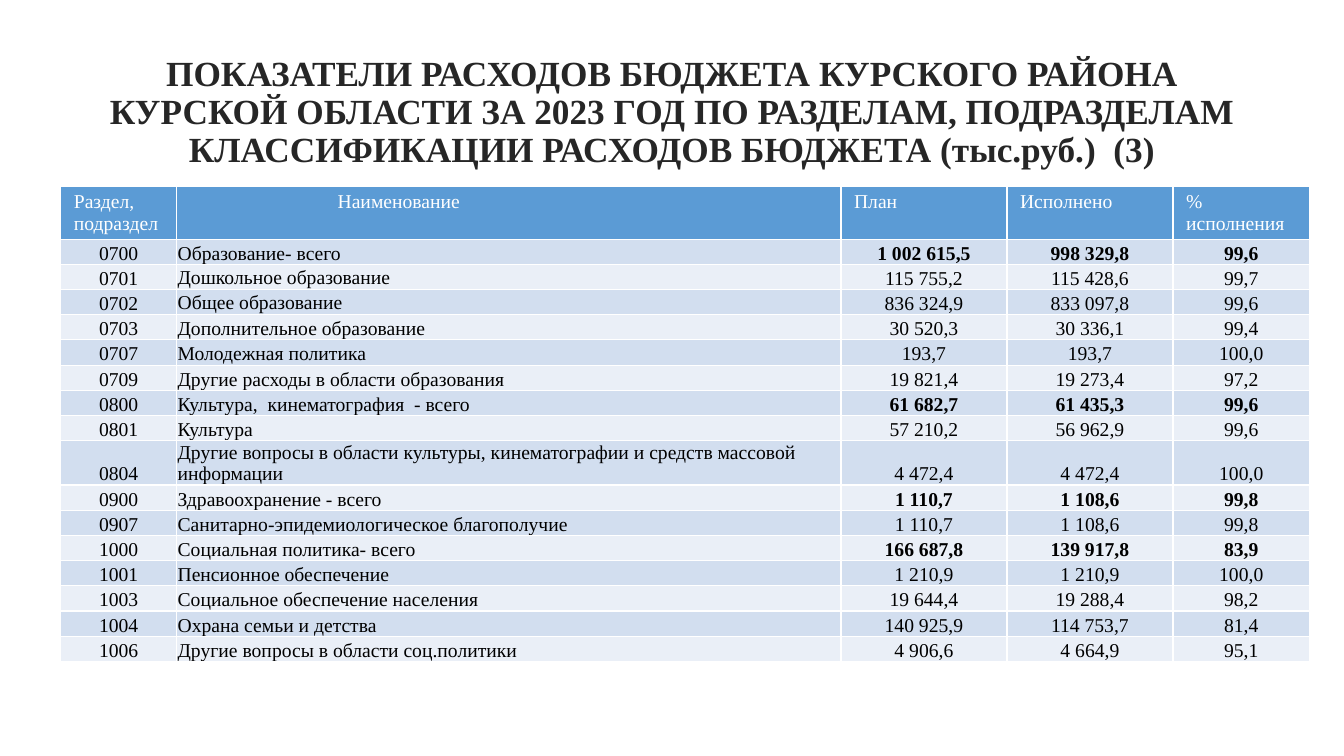
"""Build the slide on budget spending by section and subsection."""
from typing import Any, NamedTuple

from pptx import Presentation
from pptx.dml.color import RGBColor
from pptx.enum import text as t
from pptx.util import Pt

COLORS = {
    "title": "262626",
    "header": "5B9BD5",
    "header_text": "FFFFFF",
    "body_text": "000000",
    "odd": "D2DEEF",
    "even": "EAEFF7",
}
FONT = "Times New Roman"
TITLE = (
    "ПОКАЗАТЕЛИ РАСХОДОВ БЮДЖЕТА КУРСКОГО РАЙОНА КУРСКОЙ ОБЛАСТИ ЗА 2023 ГОД "
    "ПО РАЗДЕЛАМ, ПОДРАЗДЕЛАМ КЛАССИФИКАЦИИ РАСХОДОВ БЮДЖЕТА (тыс.руб.)  (3)"
)


class Column(NamedTuple):
    heading: str
    width: float
    indent: float = 9.4
    align: t.PP_ALIGN = t.PP_ALIGN.CENTER


class Expense(NamedTuple):
    code: str
    label: str
    plan: str
    spent: str
    percent: str
    height: float = 18


COLUMNS = [
    Column("Раздел, подраздел", 82.8),
    Column("Наименование", 474.5, 115, t.PP_ALIGN.LEFT),
    Column("План", 118.6),
    Column("Исполнено", 118.6),
    Column("%\nисполнения", 97.6),
]
EXPENSES = [
    Expense("0700", "Образование- всего", "1 002 615,5", "998 329,8", "99,6"),
    Expense("0701", "Дошкольное образование", "115 755,2", "115 428,6", "99,7"),
    Expense("0702", "Общее образование", "836 324,9", "833 097,8", "99,6"),
    Expense("0703", "Дополнительное образование", "30 520,3", "30 336,1", "99,4"),
    Expense("0707", "Молодежная политика", "193,7", "193,7", "100,0"),
    Expense("0709", "Другие расходы в области образования", "19 821,4", "19 273,4", "97,2"),
    Expense("0800", "Культура,  кинематография  - всего", "61 682,7", "61 435,3", "99,6"),
    Expense("0801", "Культура", "57 210,2", "56 962,9", "99,6"),
    Expense(
        "0804",
        "Другие вопросы в области культуры, кинематографии и средств массовой информации",
        "4 472,4", "4 472,4", "100,0", 31.4,
    ),
    Expense("0900", "Здравоохранение - всего", "1 110,7", "1 108,6", "99,8"),
    Expense("0907", "Санитарно-эпидемиологическое благополучие", "1 110,7", "1 108,6", "99,8"),
    Expense("1000", "Социальная политика- всего", "166 687,8", "139 917,8", "83,9"),
    Expense("1001", "Пенсионное обеспечение", "1 210,9", "1 210,9", "100,0"),
    Expense("1003", "Социальное обеспечение населения", "19 644,4", "19 288,4", "98,2"),
    Expense("1004", "Охрана семьи и детства", "140 925,9", "114 753,7", "81,4"),
    Expense("1006", "Другие вопросы в области соц.политики", "4 906,6", "4 664,9", "95,1"),
]
HEADER_HEIGHT = 37.5
MIDDLE_CODES = ("0701", "0702")


def write(frame: Any, wording: str, *, color: str, size: float = 14, bold: bool = False,
          align: t.PP_ALIGN = t.PP_ALIGN.LEFT, spacing: float = 1.0) -> None:
    """Put formatted wording into a text frame."""
    frame.text = wording
    for paragraph in frame.paragraphs:
        paragraph.alignment = align
        paragraph.line_spacing = spacing
        for run in paragraph.runs:
            run.font.name = FONT
            run.font.size = Pt(size)
            run.font.bold = bold
            run.font.color.rgb = RGBColor.from_string(COLORS[color])


def style_cell(cell: Any, fill: str, anchor: t.MSO_ANCHOR,
               insets: tuple[float, float, float, float]) -> None:
    """Set a cell's fill, anchor and insets (left, top, right, bottom)."""
    cell.fill.solid()
    cell.fill.fore_color.rgb = RGBColor.from_string(COLORS[fill])
    cell.vertical_anchor = anchor
    cell.margin_left, cell.margin_top, cell.margin_right, cell.margin_bottom = map(Pt, insets)


def draw_title(slide: Any) -> None:
    """Place and fill the title placeholder."""
    title = slide.shapes.title
    title.left, title.top, title.width, title.height = map(Pt, (66, 28.8, 828, 104.4))
    title.text_frame.auto_size = t.MSO_AUTO_SIZE.NONE
    title.text_frame.vertical_anchor = t.MSO_ANCHOR.MIDDLE
    write(title.text_frame, TITLE, color="title", size=25.2, bold=True,
          align=t.PP_ALIGN.CENTER, spacing=0.9)


def draw_header(table: Any) -> None:
    """Fill the heading row and set the column widths."""
    table.rows[0].height = Pt(HEADER_HEIGHT)
    for index, column in enumerate(COLUMNS):
        table.columns[index].width = Pt(column.width)
        heading = table.cell(0, index)
        style_cell(heading, "header", t.MSO_ANCHOR.TOP, (column.indent, 3.2, 9.4, 3.2))
        write(heading.text_frame, column.heading, color="header_text")


def draw_expense(table: Any, row: int, expense: Expense) -> None:
    """Fill one row, with bold amounts for section totals."""
    table.rows[row].height = Pt(expense.height)
    is_total = expense.label.endswith("всего")
    for index, (column, value) in enumerate(zip(COLUMNS, expense[:5])):
        is_middle = index == 1 and expense.code in MIDDLE_CODES
        cell = table.cell(row, index)
        style_cell(cell, "odd" if row % 2 else "even",
                   t.MSO_ANCHOR.MIDDLE if is_middle else t.MSO_ANCHOR.BOTTOM,
                   (0.7, 0.7, 0.7, 0))
        write(cell.text_frame, value, color="body_text",
              bold=is_total and index > 1, align=column.align)


def main() -> None:
    """Build and save the presentation."""
    deck = Presentation()
    deck.slide_width, deck.slide_height = Pt(960), Pt(540)
    slide = deck.slides.add_slide(deck.slide_layouts[5])
    draw_title(slide)
    width = sum(column.width for column in COLUMNS)
    height = HEADER_HEIGHT + sum(expense.height for expense in EXPENSES)
    spending = slide.shapes.add_table(
        len(EXPENSES) + 1, len(COLUMNS), Pt(43.4), Pt(133.3), Pt(width), Pt(height)
    ).table
    draw_header(spending)
    for row, expense in enumerate(EXPENSES, start=1):
        draw_expense(spending, row, expense)
    deck.save("out.pptx")


if __name__ == "__main__":
    main()
